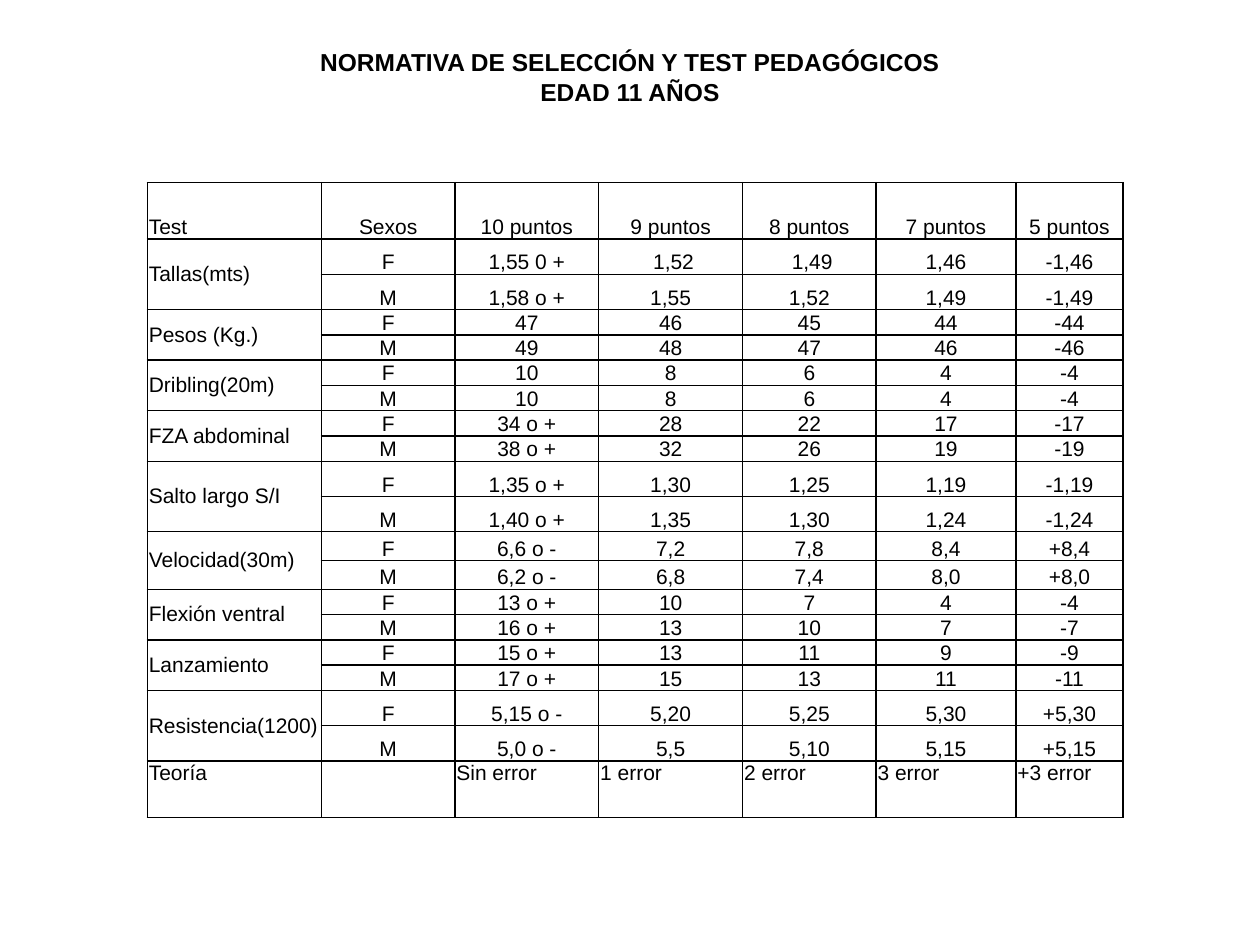
from lxml.etree import SubElement
from pptx import Presentation
from pptx.dml.color import RGBColor
from pptx.enum.text import MSO_ANCHOR as Anchor, PP_ALIGN as Align
from pptx.oxml.ns import qn
from pptx.util import Cm, Pt

COLORS = {"ink": "000000", "border": "000000"}
FONT = "Arial"

HEADINGS = ["Test", "Sexos", "10 puntos", "9 puntos", "8 puntos", "7 puntos", "5 puntos"]
THEORY = ["Teoría", "", "Sin error", "1 error", "2 error", "3 error", "+3 error"]
TALL, MEDIUM, LOW, EDGE = 0.71, 0.58, 0.51, 1.14
TESTS = [
    ("Tallas(mts)", TALL,
     ["1,55 0 +", " 1,52", " 1,49", "1,46", "-1,46"],
     ["1,58 o +", "1,55", "1,52", "1,49", "-1,49"]),
    ("Pesos (Kg.)", LOW,
     ["47", "46", "45", "44", "-44"],
     ["49", "48", "47", "46", "-46"]),
    ("Dribling(20m)", LOW,
     ["10", "8", "6", "4", "-4"],
     ["10", "8", "6", "4", "-4"]),
    ("FZA abdominal", LOW,
     ["34 o +", "28", "22", "17", "-17"],
     ["38 o +", "32", "26", "19", "-19"]),
    ("Salto largo S/I", TALL,
     ["1,35 o +", "1,30", "1,25", "1,19", "-1,19"],
     ["1,40 o +", "1,35", "1,30", "1,24", "-1,24"]),
    ("Velocidad(30m)", MEDIUM,
     ["6,6 o -", "7,2", "7,8", "8,4", "+8,4"],
     ["6,2 o -", "6,8", "7,4", "8,0", "+8,0"]),
    ("Flexión ventral", LOW,
     ["13 o +", "10", "7", "4", "-4"],
     ["16 o +", "13", "10", "7", "-7"]),
    ("Lanzamiento", LOW,
     ["15 o +", "13", "11", "9", "-9"],
     ["17 o +", "15", "13", "11", "-11"]),
    ("Resistencia(1200)", TALL,
     ["5,15 o -", "5,20", "5,25", "5,30", "+5,30"],
     ["5,0 o -", "5,5", "5,10", "5,15", "+5,15"]),
]
COLUMN_WIDTHS = [3.51, 2.69, 2.9, 2.9, 2.69, 2.82, 2.16]


def style_font(font, size, bold=False):
    font.name = FONT
    font.size = Pt(size)
    font.bold = bold
    font.color.rgb = RGBColor.from_string(COLORS["ink"])


def add_heading(slide, left, top, width, height):
    heading = slide.shapes.title
    heading.left, heading.top, heading.width, heading.height = left, top, width, height
    frame = heading.text_frame
    frame.text = "NORMATIVA DE SELECCIÓN Y TEST PEDAGÓGICOS\nEDAD 11 AÑOS"
    frame.word_wrap = True
    frame.vertical_anchor = Anchor.MIDDLE
    for line in frame.paragraphs:
        line.alignment = Align.CENTER
        for run in line.runs:
            style_font(run.font, 14, bold=True)


def style_cell(cell):
    properties = cell._tc.get_or_add_tcPr()
    for side in ("a:lnL", "a:lnR", "a:lnT", "a:lnB"):
        border = SubElement(properties, qn(side), w=str(Pt(1)))
        fill = SubElement(border, qn("a:solidFill"))
        SubElement(fill, qn("a:srgbClr"), val=COLORS["border"])
    cell.fill.background()
    cell.margin_left = cell.margin_right = Cm(0.03)
    cell.margin_top = cell.margin_bottom = 0


def write_cell(cell, text, alignment, anchor):
    cell.text = text
    cell.vertical_anchor = anchor
    paragraph = cell.text_frame.paragraphs[0]
    paragraph.alignment = alignment
    style_font(paragraph.font, 12)
    for run in paragraph.runs:
        style_font(run.font, 12)


def write_row(table, row, texts, first_column=0):
    for column, text in enumerate(texts, first_column):
        alignment = Align.CENTER if column else Align.LEFT
        write_cell(table.cell(row, column), text, alignment, Anchor.BOTTOM)


def add_score_table(slide, left, top):
    heights = [EDGE] + [test[1] for test in TESTS for _ in "FM"] + [EDGE]
    table = slide.shapes.add_table(
        len(heights), len(COLUMN_WIDTHS), left, top,
        Cm(sum(COLUMN_WIDTHS)), Cm(sum(heights))).table
    table.first_row = table.horz_banding = False
    for column, width in zip(table.columns, COLUMN_WIDTHS):
        column.width = Cm(width)
    for row, height in zip(table.rows, heights):
        row.height = Cm(height)
    for cell in table.iter_cells():
        style_cell(cell)

    write_row(table, 0, HEADINGS)
    for index, (name, _, girls, boys) in enumerate(TESTS):
        row = 1 + 2 * index
        table.cell(row, 0).merge(table.cell(row + 1, 0))
        write_cell(table.cell(row, 0), name, Align.LEFT, Anchor.MIDDLE)
        write_row(table, row, ["F"] + girls, 1)
        write_row(table, row + 1, ["M"] + boys, 1)
    for column, text in enumerate(THEORY):
        write_cell(table.cell(len(heights) - 1, column), text, Align.LEFT, Anchor.TOP)


def main():
    deck = Presentation()
    deck.slide_width, deck.slide_height = Cm(25.4), Cm(19.05)
    slide = deck.slides.add_slide(deck.slide_layouts[5])
    add_heading(slide, 0, Cm(0.91), deck.slide_width, Cm(1.27))
    add_score_table(slide, Cm(2.97), Cm(3.68))
    deck.save("out.pptx")


if __name__ == "__main__":
    main()
